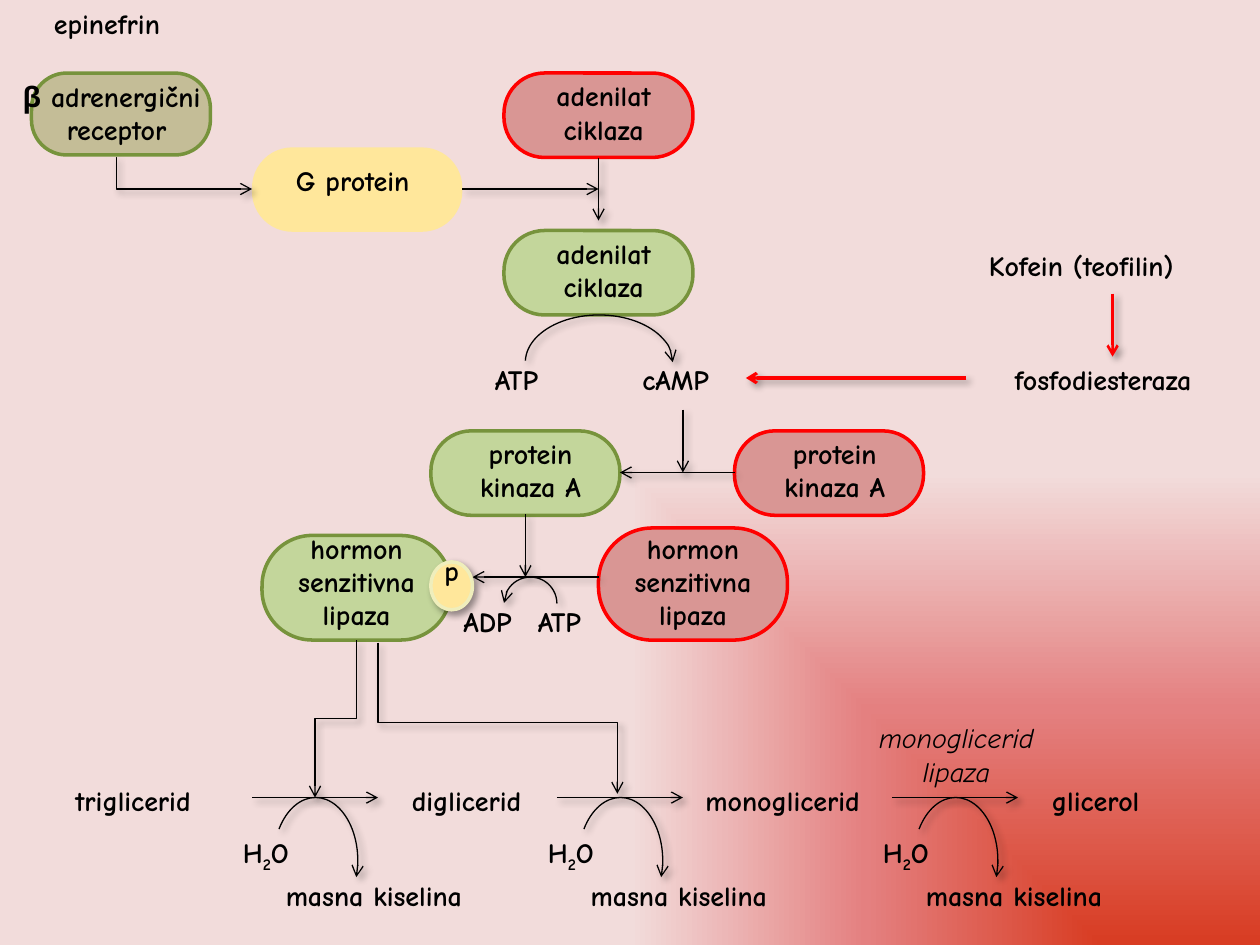
"""Build the slide showing how epinephrine sets off fat breakdown."""
from dataclasses import dataclass
from typing import Optional

from lxml.etree import SubElement
from pptx import Presentation
from pptx.dml.color import RGBColor
from pptx.enum.shapes import MSO_CONNECTOR as Link, MSO_SHAPE as Preset
from pptx.enum.text import MSO_AUTO_SIZE as AutoSize, PP_ALIGN as Align
from pptx.oxml import parse_xml
from pptx.oxml.ns import nsdecls, qn
from pptx.util import Inches, Pt

BLACK = RGBColor(0x00, 0x00, 0x00)
RED = RGBColor(0xFF, 0x00, 0x00)
PINK = RGBColor(0xD9, 0x96, 0x94)
GREEN = RGBColor(0x77, 0x93, 0x3C)
LIME = RGBColor(0xC3, 0xD6, 0x9B)
KHAKI = RGBColor(0xC4, 0xBD, 0x97)
YELLOW = RGBColor(0xFF, 0xE7, 0x9B)
CREAM = RGBColor(0xEF, 0xEE, 0xBC)
BACKDROP = ((0, "D83C22"), (50000, "E48080"), (100000, "F2DCDB"))
FONT = "Comic Neue"
WATER = (("H", 0), ("2", -25000), ("O", 0))


@dataclass(frozen=True)
class Label:
    lines: tuple
    area: tuple
    centred: bool = False
    wrap: bool = False
    tight: bool = False
    italic: bool = False


@dataclass(frozen=True)
class Cell:
    area: tuple
    fill: RGBColor
    line: Optional[RGBColor]
    label: Label
    rounding: float = 0.48


@dataclass(frozen=True)
class Arrow:
    start: tuple
    end: tuple
    color: RGBColor = BLACK
    width: float = 0.75
    bend: Optional[float] = None
    upright: bool = False


@dataclass(frozen=True)
class Arc:
    area: tuple
    angles: tuple
    end: str = "tailEnd"


def enzyme(words: tuple, area: tuple) -> Label:
    return Label(words, area, centred=True, wrap=True, tight=True)


CYCLASE = ("adenilat", "ciklaza")
KINASE = ("protein", "kinaza A")
LIPASE = ("hormon senzitivna lipaza",)
ACTIVE_LIPASE = Cell((2.08, 4.25, 1.5, 0.83), LIME, GREEN, enzyme(LIPASE, (2.08, 4.17, 1.5, 1.08)))
CELLS = (
    Cell((0.25, 0.58, 1.42, 0.65), KHAKI, GREEN,
         Label(("β adrenergični ", "receptor"), (0, 0.58, 1.85, 0.64), centred=True), 0.43),
    Cell((2, 1.17, 1.67, 0.67), YELLOW, None, Label(("G protein",), (2.25, 1.25, 1.21, 0.37))),
    Cell((4, 0.58, 1.5, 0.67), PINK, RED, enzyme(CYCLASE, (4.25, 0.58, 1.08, 0.63))),
    Cell((4, 1.83, 1.5, 0.67), LIME, GREEN, enzyme(CYCLASE, (4.25, 1.83, 1.08, 0.63))),
    Cell((5.83, 3.42, 1.5, 0.67), PINK, RED, enzyme(KINASE, (6, 3.42, 1.25, 0.63))),
    Cell((3.42, 3.42, 1.5, 0.67), LIME, GREEN, enzyme(KINASE, (3.5, 3.42, 1.42, 0.63))),
    Cell((4.75, 4.19, 1.5, 0.89), PINK, RED, enzyme(LIPASE, (4.75, 4.17, 1.5, 0.86))),
)
LABELS = (
    Label(("epinefrin",), (0.33, 0, 1.16, 0.37)),
    Label(("ATP",), (3.83, 2.83, 0.64, 0.37)),
    Label(("cAMP",), (5, 2.83, 0.8, 0.37)),
    Label(("ATP",), (4.17, 4.75, 0.64, 0.37)),
    Label(("ADP",), (3.58, 4.75, 0.65, 0.37)),
    Label(("triglicerid",), (0.5, 6.17, 1.27, 0.37)),
    Label(("diglicerid",), (3.17, 6.17, 1.19, 0.37)),
    Label(("monoglicerid",), (5.5, 6.17, 1.52, 0.37)),
    Label(("glicerol",), (8.25, 6.17, 0.98, 0.37)),
    Label(("monoglicerid", "lipaza"), (6.83, 5.67, 1.52, 0.64), centred=True, italic=True),
    Label(("Kofein (teofilin)",), (7.75, 1.92, 1.91, 0.37)),
    enzyme(("fosfodiesteraza",), (7.67, 2.83, 2.17, 0.37)),
)
ARROWS = (
    Arrow((0.92, 1.25), (2, 1.5), bend=0.005),
    Arrow((4.75, 1.25), (4.75, 1.75)),
    Arrow((3.67, 1.5), (4.75, 1.5)),
    Arrow((5.42, 3.25), (5.42, 3.75)),
    Arrow((5.83, 3.75), (4.92, 3.75)),
    Arrow((4.17, 4.08), (4.17, 4.58)),
    Arrow((4.75, 4.58), (3.75, 4.58)),
    Arrow((2.83, 5.08), (2.5, 6.33), bend=0.5, upright=True),
    Arrow((3, 5.1), (4.9, 6.3), bend=0.53, upright=True),
    Arrow((8.83, 2.33), (8.83, 2.83), RED, 1.5),
    Arrow((7.67, 3), (5.92, 3), RED, 1.75),
)
ARCS = (
    Arc((4.17, 2.5, 1.17, 0.75), (108.74, 0)),
    Arc((4, 4.58, 0.42, 0.42), (108.74, 0), "headEnd"),
)
HYDROLYSIS_LEFTS = (2, 4.42, 7.08)


def inches(area: tuple) -> list:
    return [Inches(value) for value in area]


def paint_background(page) -> None:
    stops = "".join(f'<a:gs pos="{pos}"><a:srgbClr val="{color}"/></a:gs>' for pos, color in BACKDROP)
    page._element.cSld.insert(0, parse_xml(
        f'<p:bg {nsdecls("p", "a")}><p:bgPr><a:gradFill rotWithShape="1"><a:gsLst>{stops}</a:gsLst>'
        '<a:path path="rect"><a:fillToRect l="100000" t="100000"/></a:path></a:gradFill>'
        '<a:effectLst/></p:bgPr></p:bg>'))


def cast_shadow(shape) -> None:
    effects = SubElement(shape._element.spPr, qn("a:effectLst"))
    shadow = SubElement(effects, qn("a:outerShdw"), blurRad=str(Pt(4)), dist=str(Pt(3)),
                        dir="2700000", algn="tl", rotWithShape="0")
    color = SubElement(shadow, qn("a:srgbClr"), val="000000")
    SubElement(color, qn("a:alpha"), val="40000")


def finish_arrow(shape, color: RGBColor, width: float, end: str) -> None:
    shape.line.color.rgb = color
    shape.line.width = Pt(width)
    SubElement(shape.line._get_or_add_ln(), qn(f"a:{end}"), type="arrow")
    cast_shadow(shape)


def draw_label(shapes, label: Label) -> None:
    box = shapes.add_textbox(*inches(label.area))
    frame = box.text_frame
    frame.word_wrap = label.wrap
    frame.auto_size = AutoSize.SHAPE_TO_FIT_TEXT
    for index, line in enumerate(label.lines):
        para = frame.add_paragraph() if index else frame.paragraphs[0]
        para.alignment = Align.CENTER if label.centred else Align.LEFT
        if label.tight:
            para.line_spacing = Pt(19)
        for text, baseline in ((line, 0),) if isinstance(line, str) else line:
            span = para.add_run()
            span.text = text
            span.font.name, span.font.size = FONT, Pt(16)
            span.font.bold, span.font.italic = not label.italic, label.italic
            span.font.color.rgb = BLACK
            if baseline:
                span.font._element.set("baseline", str(baseline))


def draw_body(shapes, preset, area: tuple, fill: RGBColor, line: Optional[RGBColor]):
    body = shapes.add_shape(preset, *inches(area))
    body.fill.solid()
    body.fill.fore_color.rgb = fill
    if line is None:
        body.line.fill.background()
    else:
        body.line.color.rgb = line
        body.line.width = Pt(2)
    return body


def draw_cell(page, cell: Cell):
    group = page.shapes.add_group_shape()
    body = draw_body(group.shapes, Preset.ROUNDED_RECTANGLE, cell.area, cell.fill, cell.line)
    body.shadow.inherit = False
    body.adjustments[0] = cell.rounding
    draw_label(group.shapes, cell.label)
    return group


def draw_arrow(page, arrow: Arrow) -> None:
    (x1, y1), (x2, y2) = arrow.start, arrow.end
    turn = 90 if x2 < x1 else 270
    if arrow.upright:
        sign = 1 if turn == 90 else -1
        mid_x, mid_y = (x1 + x2) / 2, (y1 + y2) / 2
        half_x, half_y = sign * (x2 - x1) / 2, sign * (y2 - y1) / 2
        x1, y1, x2, y2 = mid_x - half_y, mid_y + half_x, mid_x + half_y, mid_y - half_x
    kind = Link.STRAIGHT if arrow.bend is None else Link.ELBOW
    link = page.shapes.add_connector(kind, *inches((x1, y1, x2, y2)))
    properties = link._element.spPr
    if arrow.upright:
        properties.find(qn("a:xfrm")).set("rot", str(turn * 60000))
    if arrow.bend is not None:
        guides = properties.find(qn("a:prstGeom")).get_or_add_avLst()
        SubElement(guides, qn("a:gd"), name="adj1", fmla=f"val {round(arrow.bend * 100000)}")
    finish_arrow(link, arrow.color, arrow.width, "tailEnd")


def draw_arc(page, arc: Arc) -> None:
    curve = page.shapes.add_shape(Preset.ARC, *inches(arc.area))
    curve.adjustments[0], curve.adjustments[1] = arc.angles
    curve.fill.background()
    finish_arrow(curve, BLACK, 0.75, arc.end)


def draw_hydrolysis(page, left: float) -> None:
    draw_arrow(page, Arrow((left, 6.33), (left + 1, 6.33)))
    draw_arc(page, Arc((left + 0.17, 6.33, 0.67, 1), (132.39, 13.35)))
    draw_label(page.shapes, Label((WATER,), (left - 0.17, 6.58, 0.64, 0.37)))
    draw_label(page.shapes, Label(("masna kiselina",), (left + 0.17, 6.92, 1.73, 0.37)))


def main() -> None:
    deck = Presentation()
    deck.slide_width, deck.slide_height = Inches(10), Inches(7.5)
    page = deck.slides.add_slide(deck.slide_layouts[6])
    paint_background(page)
    for cell in CELLS:
        draw_cell(page, cell)
    lipase = draw_cell(page, ACTIVE_LIPASE)
    cast_shadow(draw_body(lipase.shapes, Preset.OVAL, (3.42, 4.46, 0.33, 0.38), YELLOW, CREAM))
    draw_label(lipase.shapes, enzyme(("p",), (3.42, 4.35, 0.33, 0.37)))
    for label in LABELS:
        draw_label(page.shapes, label)
    for arrow in ARROWS:
        draw_arrow(page, arrow)
    for arc in ARCS:
        draw_arc(page, arc)
    for left in HYDROLYSIS_LEFTS:
        draw_hydrolysis(page, left)
    deck.save("out.pptx")


if __name__ == "__main__":
    main()
